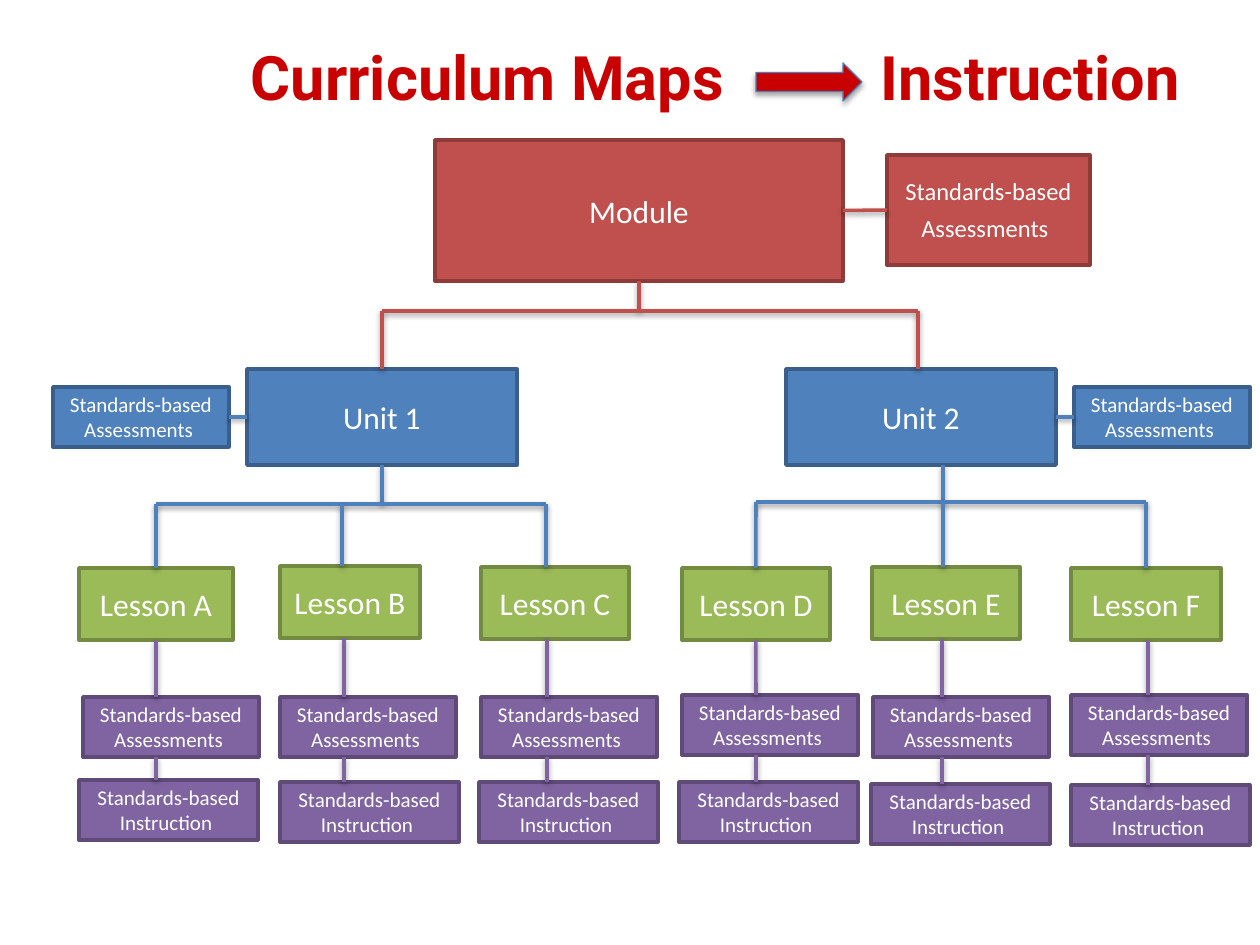
import pptx
import pptx.util
import pptx.dml.color
import pptx.enum.shapes
import pptx.enum.text
import pptx.oxml
import pptx.oxml.ns

RGBColor = pptx.dml.color.RGBColor
SHAPES = pptx.enum.shapes.MSO_SHAPE
EMU_PER_PX = 914400 / 126

WHITE = RGBColor(0xFF, 0xFF, 0xFF)
TITLE_RED = RGBColor(0xC9, 0x00, 0x00)
ARROW_EDGE = RGBColor(0x4B, 0x7E, 0xBC)
RED = RGBColor(0xC0, 0x50, 0x4D)
RED_EDGE = RGBColor(0x8E, 0x3B, 0x39)
BLUE = RGBColor(0x4F, 0x81, 0xBD)
BLUE_EDGE = RGBColor(0x3A, 0x5F, 0x8C)
GREEN = RGBColor(0x9B, 0xBB, 0x59)
GREEN_EDGE = RGBColor(0x73, 0x8A, 0x42)
PURPLE = RGBColor(0x80, 0x64, 0xA2)
PURPLE_EDGE = RGBColor(0x5F, 0x4A, 0x78)

MODULE_STYLE = (RED, RED_EDGE)
UNIT_STYLE = (BLUE, BLUE_EDGE)
LESSON_STYLE = (GREEN, GREEN_EDGE)
DETAIL_STYLE = (PURPLE, PURPLE_EDGE)

TOP, LEFT, BOTTOM, RIGHT = range(4)
ASSESSMENTS = "Standards-based Assessments "
INSTRUCTION = "Standards-based Instruction "

# name, lesson (left, top, width), assessments (left, top),
# instruction (left, top), branch x, stem x
UNIT_1_LESSONS = [
    ("Lesson A", (79, 568, 154), (83, 697), (79, 780), 156, 156),
    ("Lesson B", (280, 566, 140), (280, 697), (280, 782), 342, 344),
    ("Lesson C", (481, 567, 148), (481, 697), (479, 782), 546, 547),
]
UNIT_2_LESSONS = [
    ("Lesson D", (682, 568, 148), (682, 695), (679, 782), 756, 756),
    ("Lesson E", (872, 567, 148), (873, 697), (871, 784), 943, 942),
    ("Lesson F", (1071, 568, 150), (1071, 695), (1071, 785), 1146, 1148),
]


def px(length):
    return pptx.util.Emu(round(length * EMU_PER_PX))


def cast_shadow(item, alpha, distance):
    item.element.spPr.append(pptx.oxml.parse_xml(
        f'<a:effectLst {pptx.oxml.ns.nsdecls("a")}>'
        f'<a:outerShdw blurRad="39370" dist="{distance}" dir="5400000" rotWithShape="0">'
        f'<a:srgbClr val="000000"><a:alpha val="{alpha}"/></a:srgbClr>'
        '</a:outerShdw></a:effectLst>'))


def add_title(slide):
    title = slide.shapes.add_textbox(px(194), px(33), px(1043), px(87))
    frame = title.text_frame
    frame.word_wrap = True
    frame.auto_size = pptx.enum.text.MSO_AUTO_SIZE.SHAPE_TO_FIT_TEXT
    heading = frame.paragraphs[0]
    heading.text = "Curriculum Maps\t\t\tInstruction"
    heading.alignment = pptx.enum.text.PP_ALIGN.CENTER
    heading.font.name = "Roboto"
    heading.font.size = pptx.util.Pt(35)
    heading.font.bold = True
    heading.font.color.rgb = TITLE_RED


def add_filled(slide, preset, left, top, width, height, style, edge_width):
    shape = slide.shapes.add_shape(preset, px(left), px(top), px(width), px(height))
    fill, edge = style
    shape.fill.solid()
    shape.fill.fore_color.rgb = fill
    shape.line.color.rgb = edge
    shape.line.width = pptx.util.Pt(edge_width)
    return shape


def add_title_arrow(slide):
    arrow = add_filled(slide, SHAPES.RIGHT_ARROW, 756, 63, 106, 38,
                       (TITLE_RED, ARROW_EDGE), 0.75)
    cast_shadow(arrow, 35000, 22860)


def add_box(slide, text, left, top, width, height, style, size):
    box = add_filled(slide, SHAPES.RECTANGLE, left, top, width, height, style, 2)
    box.shadow.inherit = False
    box.text_frame.vertical_anchor = pptx.enum.text.MSO_ANCHOR.MIDDLE
    label = box.text_frame.paragraphs[0]
    label.alignment = pptx.enum.text.PP_ALIGN.CENTER
    label.text = text
    label.font.name = "Calibri"
    label.font.size = pptx.util.Pt(size)
    label.font.color.rgb = WHITE
    return box


def add_line(slide, start, end, color):
    line = slide.shapes.add_connector(
        pptx.enum.shapes.MSO_CONNECTOR.STRAIGHT, *map(px, start + end))
    line.line.color.rgb = color
    line.line.width = pptx.util.Pt(2)
    cast_shadow(line, 38000, 20320)
    return line


def is_centred(box, x):
    return abs(box.left + box.width // 2 - px(x)) < px(1)


def add_drop(slide, x, top, bottom, color, upper=None, lower=None):
    drop = add_line(slide, (x, top), (x, bottom), color)
    if upper is not None and is_centred(upper, x):
        drop.begin_connect(upper, BOTTOM)
    if lower is not None and is_centred(lower, x):
        drop.end_connect(lower, TOP)


def add_side_link(slide, left_box, right_box, color):
    link = add_line(slide, (0, 0), (0, 0), color)
    link.begin_connect(left_box, RIGHT)
    link.end_connect(right_box, LEFT)


def add_module(slide):
    module = add_box(slide, "Module", 435, 140, 408, 141, MODULE_STYLE, 18)
    assessments = add_box(slide, ASSESSMENTS, 887, 155, 203, 110, MODULE_STYLE, 14)
    label = assessments.text_frame.paragraphs[0]
    label.runs[0].text = ASSESSMENTS.rstrip()
    space = label.add_run()
    space.text = " "
    space.font.size = pptx.util.Pt(18)
    add_side_link(slide, module, assessments, RED)
    add_drop(slide, 639, 281, 311, RED, upper=module)
    add_line(slide, (918, 311), (382, 311), RED)
    return module


def add_unit(slide, name, left, branch_x):
    unit = add_box(slide, name, left, 369, 270, 96, UNIT_STYLE, 18)
    add_drop(slide, branch_x, 311, 369, RED, lower=unit)
    return unit


def add_unit_assessments(slide, left):
    return add_box(slide, ASSESSMENTS, left, 387, 176, 60, UNIT_STYLE, 12)


def add_lesson(slide, lesson_data, bar_y):
    name, (left, top, width), assess_at, instruct_at, branch_x, stem_x = lesson_data
    lesson = add_box(slide, name, left, top, width, 72, LESSON_STYLE, 18)
    assessments = add_box(slide, ASSESSMENTS, *assess_at, 176, 60, DETAIL_STYLE, 12)
    instruction = add_box(slide, INSTRUCTION, *instruct_at, 179, 60, DETAIL_STYLE, 12)
    add_drop(slide, branch_x, bar_y, top, BLUE, lower=lesson)
    add_drop(slide, stem_x, top + 72, assess_at[1], PURPLE, lesson, assessments)
    add_drop(slide, stem_x, assess_at[1] + 60, instruct_at[1], PURPLE,
             assessments, instruction)


def add_lessons(slide, unit, lessons, stem_x, bar_y):
    add_drop(slide, stem_x, 465, bar_y, BLUE, upper=unit)
    add_line(slide, (lessons[-1][4], bar_y), (lessons[0][4], bar_y), BLUE)
    for lesson_data in lessons:
        add_lesson(slide, lesson_data, bar_y)


def main():
    deck = pptx.Presentation()
    deck.slide_width = px(1260)
    deck.slide_height = px(945)
    slide = deck.slides.add_slide(deck.slide_layouts[6])
    add_title(slide)
    add_title_arrow(slide)
    add_module(slide)
    unit_1 = add_unit(slide, "Unit 1", 247, 382)
    unit_2 = add_unit(slide, "Unit 2", 786, 918)
    add_side_link(slide, add_unit_assessments(slide, 53), unit_1, BLUE)
    add_side_link(slide, unit_2, add_unit_assessments(slide, 1074), BLUE)
    add_lessons(slide, unit_1, UNIT_1_LESSONS, 382, 504)
    add_lessons(slide, unit_2, UNIT_2_LESSONS, 943, 502)
    deck.save("out.pptx")


if __name__ == "__main__":
    main()
